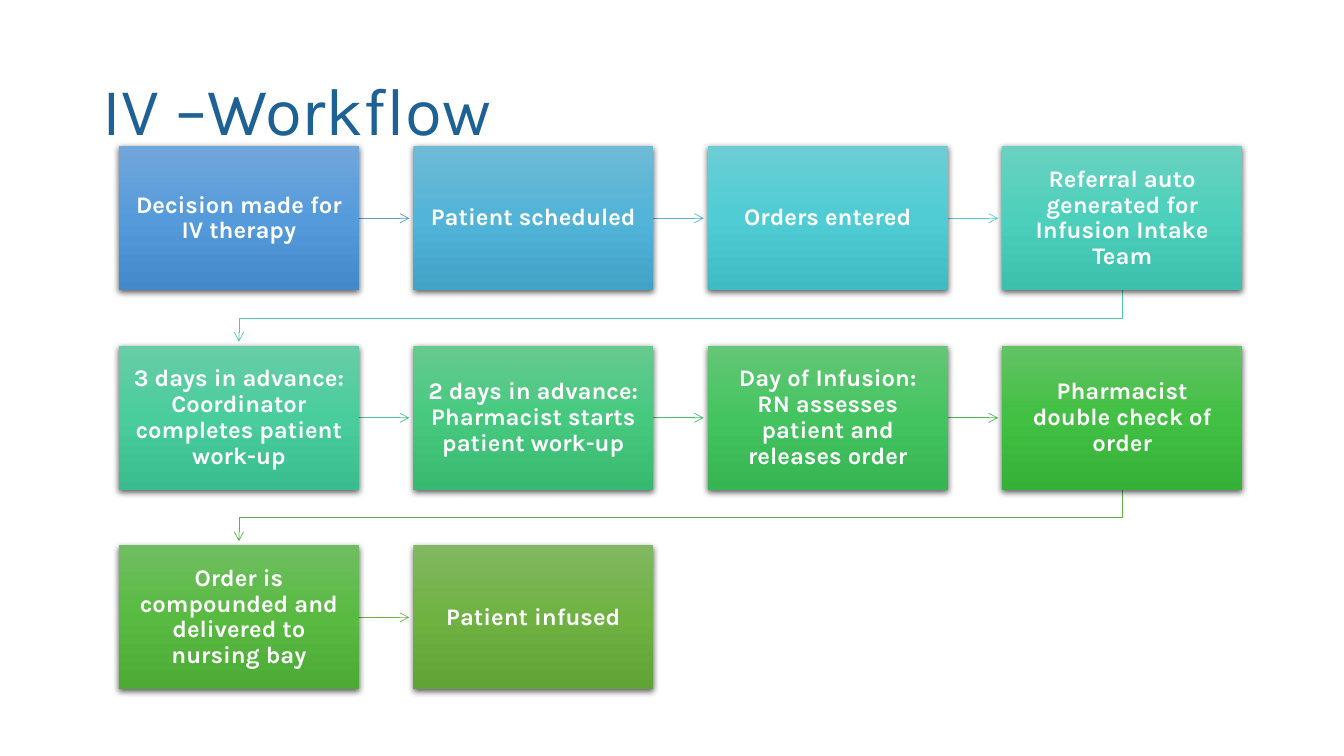
from copy import deepcopy

from lxml import etree
from pptx import Presentation
from pptx import util as u
from pptx.dml.color import RGBColor
from pptx.enum import shapes, text
from pptx.oxml.ns import qn

# Content: label, three gradient colours, colour of the arrow that leaves
TITLE = "IV –Workflow"
STEPS = [
    ("Decision made for IV therapy", "71A6DB 559BDB 448ACA", "5B9BD5"),
    ("Patient scheduled", "6FBAD7 52B4D8 42A3C7", "57B4D1"),
    ("Orders entered", "6CCED4 4FCCD4 3FBCC3", "54CCCD"),
    ("Referral auto generated for Infusion Intake Team",
     "6AD1C0 4CD0BC 3CC0AC", "51C9AD"),
    ("3 days in advance: Coordinator completes patient work-up",
     "68CDA6 49CD9D 3ABD8E", "4DC58D"),
    ("2 days in advance: Pharmacist starts patient work-up",
     "66CA8E 46C97F 38B970", "4AC06E"),
    ("Day of Infusion: RN assesses patient and releases order",
     "64C677 44C460 36B552", "48BB4F"),
    ("Pharmacist double check of order", "63C264 41C043 34B136", "59B546"),
    ("Order is compounded and delivered to nursing bay",
     "70BE61 58BA41 4CAA35", "70AD47"),
    ("Patient infused", "81B861 6FB242 62A336", None),
]
BLUE = RGBColor(0x1D, 0x61, 0x95)
WHITE = RGBColor(0xFF, 0xFF, 0xFF)
FONT = "Karla"

# Grid
COLS = 4
LEFT, TOP = u.Inches(1.18), u.Inches(1.45)
WIDE, HIGH = u.Inches(2.38), u.Inches(1.43)
STEP_X, STEP_Y = u.Inches(2.92), u.Inches(1.98)
GAP_X, GAP_Y = STEP_X - WIDE, STEP_Y - HIGH
TIP = u.Inches(0.04)  # space between an arrowhead and the next box
INSET = u.Inches(0.13)

deck = Presentation()
deck.slide_width, deck.slide_height = u.Inches(13.33), u.Inches(7.5)
slide = deck.slides.add_slide(deck.slide_layouts[5])


def write(shape, words, size, color, bold=False, align=text.PP_ALIGN.LEFT,
          inset=None):
    frame = shape.text_frame
    frame.word_wrap = True
    frame.auto_size = text.MSO_AUTO_SIZE.NONE
    frame.vertical_anchor = text.MSO_ANCHOR.MIDDLE
    if inset is not None:
        frame.margin_left = frame.margin_right = inset
        frame.margin_top = frame.margin_bottom = inset
    para = frame.paragraphs[0]
    para.alignment, para.line_spacing = align, 0.9
    run = para.add_run()
    run.text = words
    font = run.font
    font.name, font.size, font.bold = FONT, u.Pt(size), bold
    font.color.rgb = color


def corner(index):
    row, col = divmod(index, COLS)
    return LEFT + col * STEP_X, TOP + row * STEP_Y


def add_step(index, label, shades):
    x, y = corner(index)
    box = slide.shapes.add_shape(
        shapes.MSO_SHAPE.RECTANGLE, x, y, WIDE, HIGH)
    # Three-stop gradient, top to bottom
    box.fill.gradient()
    box.fill.gradient_angle = 270
    stops = box._element.spPr.find(".//" + qn("a:gsLst"))
    stops.append(deepcopy(stops[0]))
    for stop, shade, place in zip(box.fill.gradient_stops, shades.split(),
                                  (0, 0.5, 1)):
        stop.color.rgb = RGBColor.from_string(shade)
        stop.position = place
    box.line.fill.background()
    # Soft shadow below
    box.shadow.inherit = False
    effects = box._element.spPr.find(qn("a:effectLst"))
    shadow = etree.SubElement(
        effects, qn("a:outerShdw"), blurRad=str(u.Pt(4.5)),
        dist=str(u.Pt(1.5)), dir="5400000", algn="ctr", rotWithShape="0")
    black = etree.SubElement(shadow, qn("a:srgbClr"), val="000000")
    etree.SubElement(black, qn("a:alpha"), val="63000")
    write(box, label, 17, WHITE, bold=True, align=text.PP_ALIGN.CENTER,
          inset=INSET)


def add_arrow(index, color):
    x, y = corner(index)
    if (index + 1) % COLS:  # straight on to the next column
        mid = y + HIGH // 2
        arrow = slide.shapes.add_connector(
            shapes.MSO_CONNECTOR.STRAIGHT,
            x + WIDE, mid, x + STEP_X - TIP, mid)
    else:  # down, back to the first column, and down to the next row
        start, end = x + WIDE // 2, LEFT + WIDE // 2
        base = y + HIGH
        turn = base + GAP_Y // 2
        path = slide.shapes.build_freeform(start, base)
        path.add_line_segments(
            [(start, turn), (end, turn), (end, base + GAP_Y - TIP)],
            close=False)
        arrow = path.convert_to_shape()
        arrow.fill.background()
    arrow.line.color.rgb = RGBColor.from_string(color)
    arrow.line.width = u.Pt(0.5)
    etree.SubElement(arrow.line._get_or_add_ln(), qn("a:tailEnd"),
                     type="arrow")
    etree.SubElement(arrow._element.spPr, qn("a:effectLst"))


# Title
title = slide.shapes.title
title.left, title.top = u.Inches(0.92), u.Inches(0.4)
title.width, title.height = u.Inches(11.5), u.Inches(1.45)
write(title, TITLE, 48, BLUE)

# Workflow
for index, (label, shades, color) in enumerate(STEPS):
    if color:
        add_arrow(index, color)
    add_step(index, label, shades)

deck.save("out.pptx")
